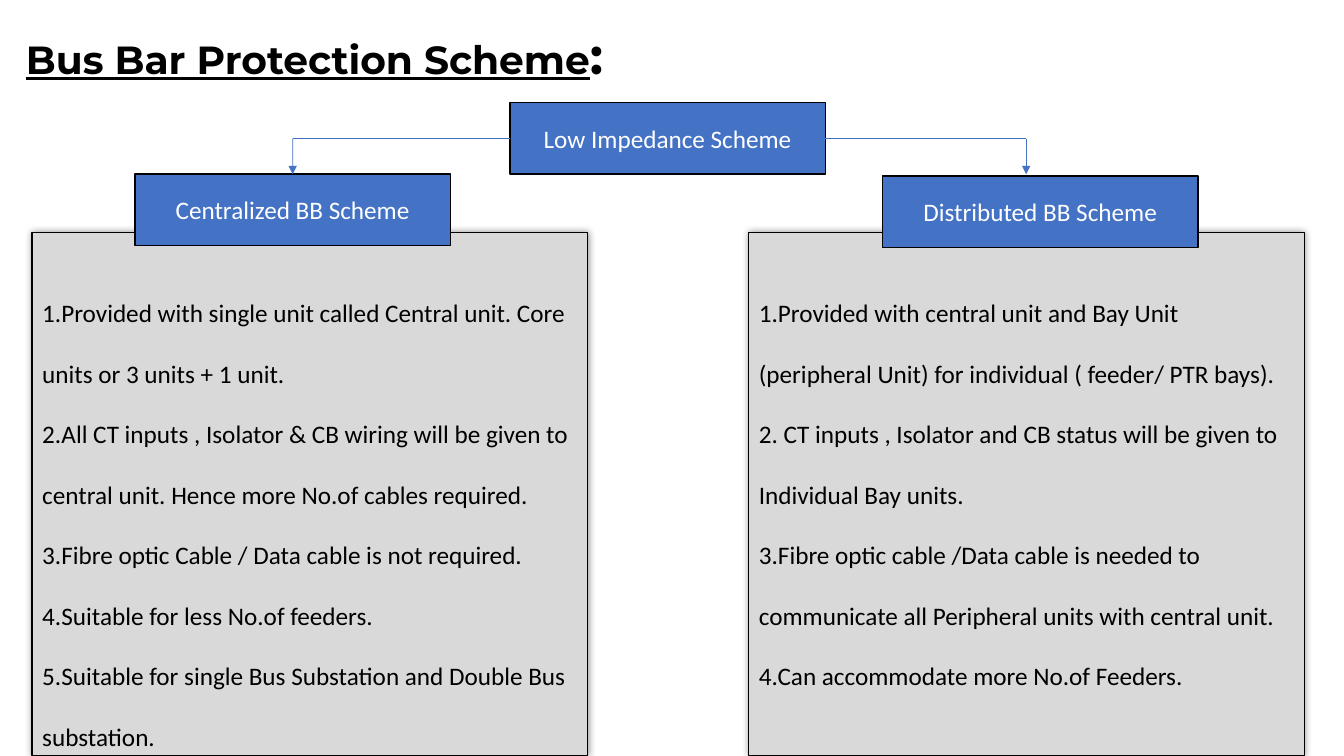
from lxml import etree
from pptx import Presentation
from pptx.dml.color import RGBColor
from pptx.enum.shapes import MSO_CONNECTOR, MSO_SHAPE
from pptx.enum.text import MSO_ANCHOR as ANCHOR, MSO_AUTO_SIZE as AUTO, PP_ALIGN as ALIGN
from pptx.oxml import parse_xml
from pptx.oxml.ns import nsdecls, qn
from pptx.util import Cm, Pt

BLACK = RGBColor(0x00, 0x00, 0x00)
WHITE = RGBColor(0xFF, 0xFF, 0xFF)
BLUE = RGBColor(0x44, 0x72, 0xC4)
GREY = RGBColor(0xD9, 0xD9, 0xD9)

SHADOW = (
    f'<a:effectLst {nsdecls("a")}>'
    '<a:outerShdw blurRad="63500" algn="ctr" rotWithShape="0">'
    '<a:srgbClr val="000000"><a:alpha val="40000"/></a:srgbClr>'
    '</a:outerShdw></a:effectLst>'
)


def add_run(p, text, size, color, font="Calibri"):
    r = p.add_run()
    r.text = text
    r.font.size = Pt(size)
    r.font.name = font
    r.font.color.rgb = color
    return r


def paint(sp, fill):
    sp.fill.solid()
    sp.fill.fore_color.rgb = fill
    sp.line.color.rgb = BLACK
    sp.line.width = Pt(1)


prs = Presentation()
prs.slide_width, prs.slide_height = Cm(33.87), Cm(19.05)
slide = prs.slides.add_slide(prs.slide_layouts[3])

# Title
title = slide.shapes.title
title.left, title.top, title.width, title.height = Cm(0.4), Cm(0.48), Cm(30.48), Cm(1.8)
tf = title.text_frame
tf.auto_size = AUTO.NONE
tf.vertical_anchor = ANCHOR.TOP
p = tf.paragraphs[0]
p.alignment = ALIGN.LEFT
for text, size, underline in [("Bus Bar Protection Scheme", 28, True), (":", 36, False)]:
    r = add_run(p, text, size, BLACK, "Montserrat")
    r.font.bold = True
    r.font.underline = underline

# Lists of features
features = [
    (1, 0.81, [
        "1.Provided with single unit called Central unit. Core units or 3 units + 1 unit.",
        "2.All CT inputs , Isolator & CB wiring will be given to central unit. "
        "Hence more No.of cables required.",
        "3.Fibre optic Cable / Data cable is not required.",
        "4.Suitable for less No.of feeders.",
        "5.Suitable for single Bus Substation and Double Bus substation.",
    ]),
    (2, 18.87, [
        "1.Provided with central unit and Bay Unit (peripheral Unit) for individual "
        "( feeder/ PTR bays).",
        "2. CT inputs , Isolator and CB status will be given to Individual Bay units.",
        "3.Fibre optic cable /Data cable is needed to communicate all Peripheral units "
        "with central unit.",
        "4.Can accommodate more No.of Feeders.",
    ]),
]
for idx, left, lines in features:
    sp = slide.placeholders[idx]
    sp.left, sp.top, sp.width, sp.height = Cm(left), Cm(5.86), Cm(14), Cm(13.18)
    paint(sp, GREY)
    sp._element.spPr.append(parse_xml(SHADOW))
    tf = sp.text_frame
    tf.auto_size = AUTO.NONE
    tf.vertical_anchor = ANCHOR.TOP
    tf.margin_top = Cm(0.88)
    for i, line in enumerate(lines):
        p = tf.paragraphs[0] if i == 0 else tf.add_paragraph()
        p.line_spacing = 2.0
        p.space_before = Pt(0)
        pPr = p._p.get_or_add_pPr()
        pPr.set("marL", "0")
        pPr.set("indent", "0")
        etree.SubElement(pPr, qn("a:buNone"))
        add_run(p, line, 18, BLACK)

# Scheme boxes
boxes = []
for text, left, top in [
    ("Low Impedance Scheme", 12.85, 2.59),
    ("Centralized BB Scheme", 3.4, 4.39),
    ("Distributed BB Scheme", 22.24, 4.44),
]:
    sp = slide.shapes.add_shape(MSO_SHAPE.RECTANGLE, Cm(left), Cm(top), Cm(7.95), Cm(1.8))
    sp.shadow.inherit = False
    paint(sp, BLUE)
    tf = sp.text_frame
    tf.word_wrap = True
    tf.vertical_anchor = ANCHOR.MIDDLE
    p = tf.paragraphs[0]
    p.alignment = ALIGN.CENTER
    add_run(p, text, 18, WHITE)
    boxes.append(sp)
low_impedance, centralized, distributed = boxes

# Branches: a level line out of the top box, then an arrow down
BRANCH_Y, ARROW_Y = 3.49, 4.39
for side, side_x, turn_x, target in [(3, 20.8, 25.86, None), (1, 12.85, 7.38, centralized)]:
    level = slide.shapes.add_connector(
        MSO_CONNECTOR.STRAIGHT, Cm(side_x), Cm(BRANCH_Y), Cm(turn_x), Cm(BRANCH_Y))
    level.begin_connect(low_impedance, side)
    arrow = slide.shapes.add_connector(
        MSO_CONNECTOR.STRAIGHT, Cm(turn_x), Cm(BRANCH_Y), Cm(turn_x), Cm(ARROW_Y))
    if target is not None:
        arrow.end_connect(target, 0)
    for cn in (level, arrow):
        cn.line.color.rgb = BLUE
        cn.line.width = Pt(0.5)
        etree.SubElement(cn._element.spPr, qn("a:effectLst"))
    etree.SubElement(arrow.line._get_or_add_ln(), qn("a:tailEnd"), type="triangle")

prs.save("out.pptx")
